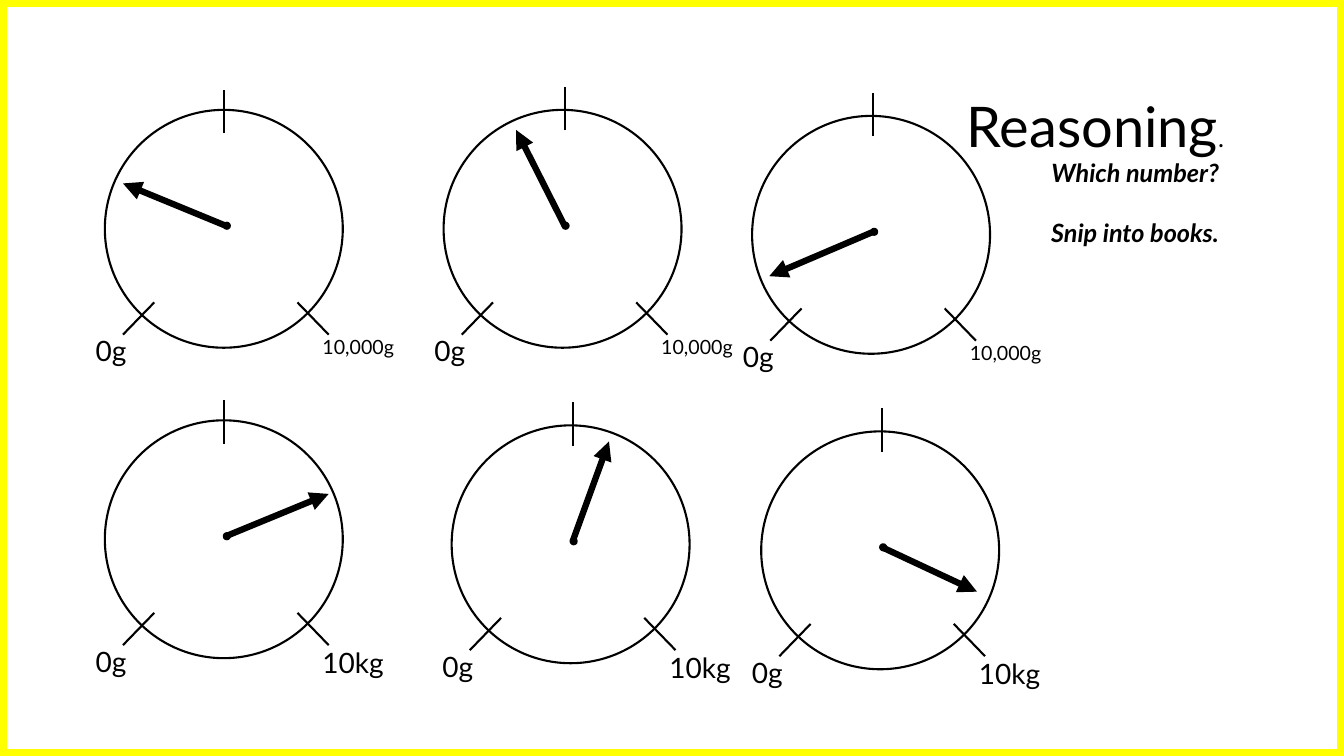
from dataclasses import dataclass
from pptx import Presentation
from pptx.dml.color import RGBColor
from pptx.enum.shapes import MSO_CONNECTOR, MSO_SHAPE
from pptx.enum.text import MSO_ANCHOR, MSO_AUTO_SIZE, PP_ALIGN
from pptx.oxml.ns import qn
from pptx.util import Inches, Pt
from lxml.etree import SubElement


@dataclass(frozen=True)
class Theme:
    font: str = "Lato"
    ink: RGBColor = RGBColor(0, 0, 0)
    border: RGBColor = RGBColor(255, 255, 0)
    title: Pt = Pt(40)
    body: Pt = Pt(18)
    label: Pt = Pt(20)
    small_label: Pt = Pt(14)
    outline: Pt = Pt(1.5)
    needle: Pt = Pt(4.5)
    frame: Pt = Pt(10)


THEME = Theme()
FACE = 2.36
HUB = 0.06
LEFT_COLUMN_TICK = (1.18, 0.23)
OTHER_TICK = (1.2, 0.2)
GRAMS = ("10,000g", THEME.small_label)
KILOGRAMS = ("10kg", THEME.label)

DIALS = [
    (1.04, 1.09, LEFT_COLUMN_TICK, (1.22, 1.82), GRAMS),
    (1.04, 4.17, LEFT_COLUMN_TICK, (3.26, 4.9), KILOGRAMS),
    (4.4, 1.09, OTHER_TICK, (5.12, 1.29), GRAMS),
    (4.48, 4.22, OTHER_TICK, (6.04, 4.38), KILOGRAMS),
    (7.46, 1.15, OTHER_TICK, (7.63, 2.74), GRAMS),
    (7.55, 4.28, OTHER_TICK, (9.69, 5.87), KILOGRAMS),
]


def apply_format(target, values):
    for name, value in values.items():
        setattr(target, name, value)


def place(shape, left, top, width, height):
    apply_format(shape, {"left": Inches(left), "top": Inches(top),
                         "width": Inches(width), "height": Inches(height)})


def add_words(paragraph, words, size, **emphasis):
    run = paragraph.add_run()
    run.text = words
    apply_format(run.font, {"name": THEME.font, "size": size, **emphasis})
    run.font.color.rgb = THEME.ink


def add_outline(slide, preset, box, color, width, filled=False):
    outline = slide.shapes.add_shape(preset, *map(Inches, box))
    outline.shadow.inherit = False
    if filled:
        outline.fill.solid()
        outline.fill.fore_color.rgb = color
    else:
        outline.fill.background()
    outline.line.color.rgb = color
    outline.line.width = width


def add_line(slide, start, end, width, arrow=False):
    line = slide.shapes.add_connector(
        MSO_CONNECTOR.STRAIGHT, *map(Inches, (*start, *end)))
    line.line.color.rgb = THEME.ink
    line.line.width = width
    if arrow:
        SubElement(line.line._get_or_add_ln(), qn("a:tailEnd"), type="triangle")
    SubElement(line._element.spPr, qn("a:effectLst"))


def add_label(slide, left, top, width, words, size):
    height = 0.44 if size == THEME.label else 0.34
    label = slide.shapes.add_textbox(*map(Inches, (left, top, width, height)))
    apply_format(label.text_frame, {"word_wrap": True,
                                    "auto_size": MSO_AUTO_SIZE.SHAPE_TO_FIT_TEXT})
    add_words(label.text_frame.paragraphs[0], words, size)


def add_dial(slide, left, top, top_tick, needle_tip, maximum):
    tick_x, tick_y = top_tick
    ticks = [
        ((0.18, 2.23), (0.49, 1.91)),
        ((2.22, 2.23), (1.91, 1.91)),
        ((tick_x, tick_y), (tick_x, tick_y - 0.43)),
    ]
    for (x1, y1), (x2, y2) in ticks:
        add_line(slide, (left + x1, top + y1), (left + x2, top + y2), THEME.outline)
    add_outline(slide, MSO_SHAPE.OVAL, (left, top, FACE, FACE),
                THEME.ink, THEME.outline)
    add_outline(slide, MSO_SHAPE.OVAL, (left + 1.18, top + 1.12, HUB, HUB),
                THEME.ink, THEME.outline, filled=True)
    add_line(slide, (left + 1.2, top + 1.15), needle_tip, THEME.needle, arrow=True)
    add_label(slide, left - 0.19, top + 2.17, 0.77, "0g", THEME.label)
    add_label(slide, left + 2.06, top + 2.18, 1.07, *maximum)


def format_frame(frame):
    apply_format(frame, {"word_wrap": False, "vertical_anchor": MSO_ANCHOR.TOP,
                         "auto_size": MSO_AUTO_SIZE.SHAPE_TO_FIT_TEXT})


def fill_title(title):
    place(title, 9.43, 0.86, 2.81, 0.77)
    format_frame(title.text_frame)
    heading = title.text_frame.paragraphs[0]
    heading.alignment = PP_ALIGN.RIGHT
    add_words(heading, "Reasoning", THEME.title)
    add_words(heading, ".", THEME.body)


def fill_instructions(body):
    place(body, 10.17, 1.51, 2.02, 1.01)
    format_frame(body.text_frame)
    question = body.text_frame.paragraphs[0]
    task = body.text_frame.add_paragraph()
    for paragraph, words, gap in ((question, "Which number?", 0),
                                  (task, "Snip into books.", 21.6)):
        apply_format(paragraph, {"alignment": PP_ALIGN.RIGHT,
                                 "space_before": Pt(gap)})
        properties = paragraph._p.get_or_add_pPr()
        properties.set("marL", "0")
        properties.set("indent", "0")
        SubElement(properties, qn("a:buNone"))
        add_words(paragraph, words, THEME.body, bold=True, italic=True)


def main():
    deck = Presentation()
    apply_format(deck, {"slide_width": Inches(13.33), "slide_height": Inches(7.5)})
    slide = deck.slides.add_slide(deck.slide_layouts[1])
    fill_title(slide.shapes.title)
    fill_instructions(slide.placeholders[1])
    for dial in DIALS:
        add_dial(slide, *dial)
    add_outline(slide, MSO_SHAPE.RECTANGLE, (0, 0, 13.33, 7.5),
                THEME.border, THEME.frame)
    deck.save("out.pptx")


if __name__ == "__main__":
    main()
